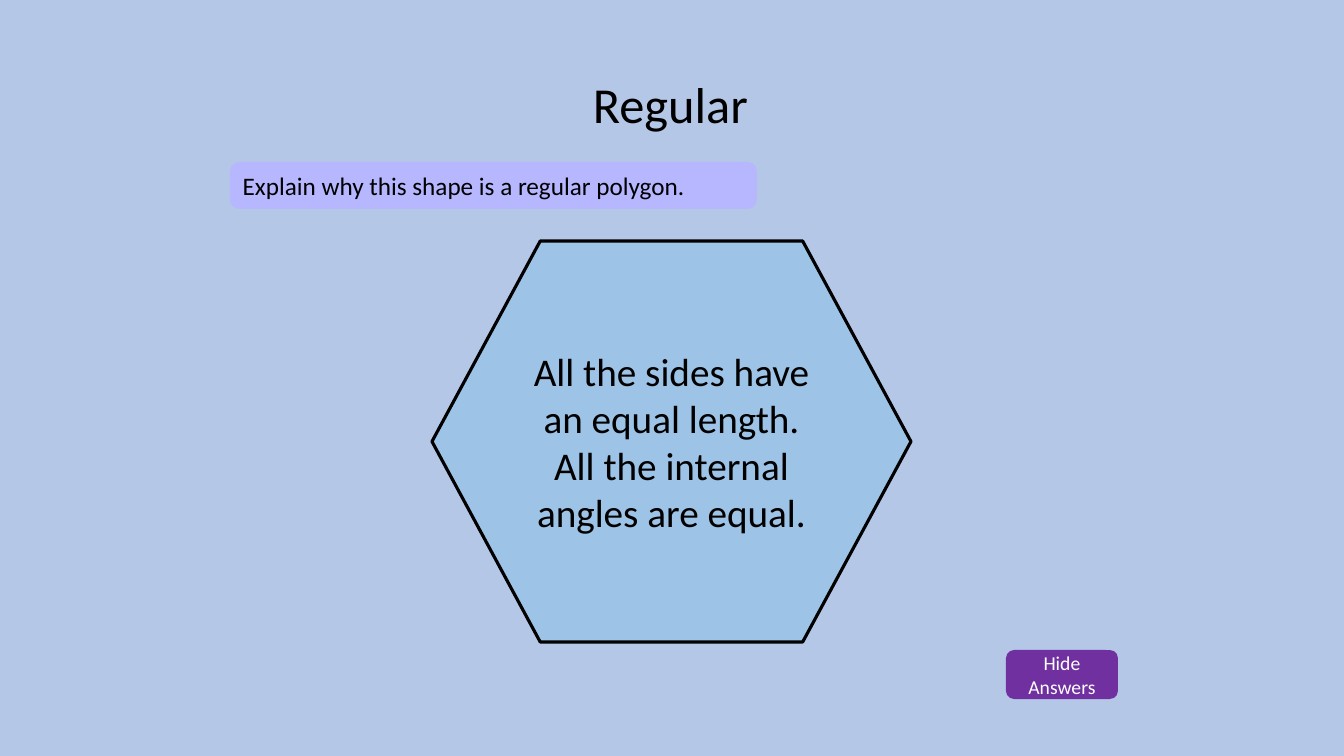
from pptx import Presentation
from pptx import util as u
from pptx.dml.color import RGBColor
from pptx.enum import shapes, text

PX = 914400 / 100.8
FONT = "Calibri"
KIND = shapes.MSO_SHAPE
ALIGN = text.PP_ALIGN


def px(n):
    return u.Emu(round(n * PX))


def color(code):
    return RGBColor.from_string(code)


def write(frame, words, size, ink, align):
    frame.word_wrap = True
    frame.vertical_anchor = text.MSO_ANCHOR.MIDDLE
    frame.text = words
    for para in frame.paragraphs:
        para.alignment = align
        for run in para.runs:
            run.font.name = FONT
            run.font.size = u.Pt(size)
            run.font.color.rgb = color(ink)


def panel(slide, kind, box, fill, words, size, ink="000000",
          align=ALIGN.CENTER, adj=None, line=None):
    shape = slide.shapes.add_shape(kind, *map(px, box))
    shape.shadow.inherit = False
    shape.fill.solid()
    shape.fill.fore_color.rgb = color(fill)
    if line:
        shape.line.color.rgb = color(line)
        shape.line.width = u.Pt(2.25)
    else:
        shape.line.fill.background()
    if adj is not None:
        shape.adjustments[0] = adj
    write(shape.text_frame, words, size, ink, align)


def heading(slide, box, words):
    title = slide.shapes.title
    title.left, title.top, title.width, title.height = map(px, box)
    write(title.text_frame, words, 36, "000000", ALIGN.CENTER)
    title.text_frame.paragraphs[0].line_spacing = 0.9


def quiz(slide):
    slide.background.fill.solid()
    slide.background.fill.fore_color.rgb = color("B4C7E7")

    # Title and question
    heading(slide, (186, 52, 969, 110), "Regular")
    panel(slide, KIND.ROUNDED_RECTANGLE, (230, 162, 527, 47), "B7B7FF",
          "Explain why this shape is a regular polygon.", 18,
          align=ALIGN.LEFT, adj=0.2)

    # Button
    panel(slide, KIND.ROUNDED_RECTANGLE, (1006, 650, 112, 49), "7030A0",
          "Hide\nAnswers", 14, ink="FFFFFF")

    # Polygon with the answer
    panel(slide, KIND.HEXAGON, (432, 241, 479, 401), "9DC3E6",
          "All the sides have an equal length.\n"
          "All the internal angles are equal.", 28,
          adj=0.27, line="000000")


def main():
    deck = Presentation()
    deck.slide_width, deck.slide_height = px(1344), px(756)
    quiz(deck.slides.add_slide(deck.slide_layouts[5]))
    deck.save("out.pptx")


if __name__ == "__main__":
    main()
